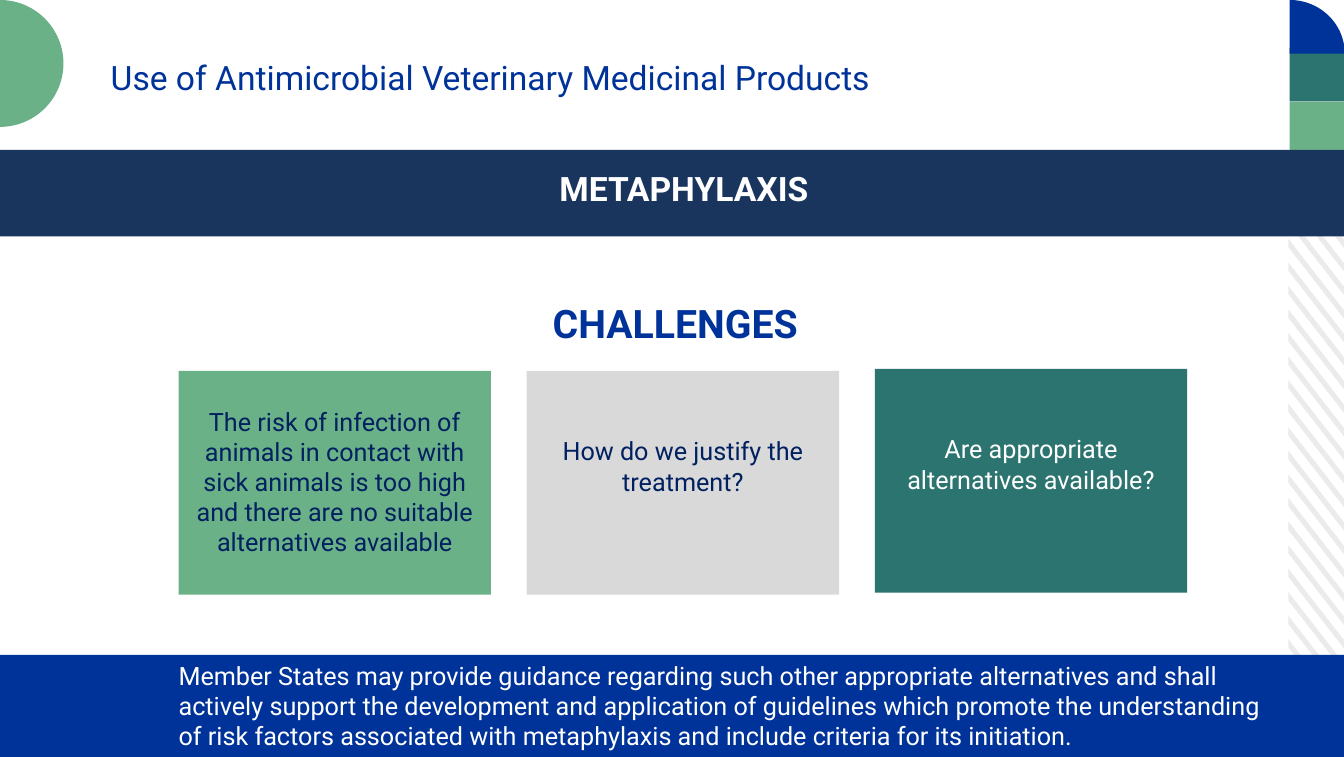
import math
from pptx import Presentation
from pptx.dml.color import RGBColor
from pptx.enum import shapes, text
from pptx.util import Cm, Pt

TITLE = "Use of Antimicrobial Veterinary Medicinal Products"
TOPIC = "METAPHYLAXIS"
HEAD = "CHALLENGES"
CARDS = [
    {"words": "The risk of infection of animals in contact with sick animals "
              "is too high and there are no suitable alternatives available",
     "fill": "green", "ink": "navy", "top": 9.35, "skip": 1},
    {"words": "How do we justify the treatment?",
     "fill": "grey", "ink": "navy", "top": 9.35, "skip": 2},
    {"words": "Are appropriate alternatives available?",
     "fill": "teal", "ink": "white", "top": 9.3, "skip": 2},
]
NOTE = [
    "Member States may provide guidance regarding such other appropriate alternatives and shall",
    "actively support the development and application of guidelines which promote the understanding",
    "of risk factors associated with metaphylaxis and include criteria for its initiation.",
]
THEME = {
    "font": "Roboto",
    "size": {"title": 24, "topic": 24, "head": 28, "body": 18},
    "color": {"blue": "003399", "navy": "002060", "band": "19355D", "green": "6BB188",
              "teal": "2C7470", "grey": "D9D9D9", "stripe": "ECEBEB", "white": "FFFFFF"},
}
WIDE, HIGH = 33.86, 19.08
EDGE, CREST, PAD, LINE = 32.46, 3.91, 0.13, 0.75
LEFT, CENTER = text.PP_ALIGN.LEFT, text.PP_ALIGN.CENTER
KIND = shapes.MSO_SHAPE


def tint(name):
    return RGBColor.from_string(THEME["color"][name])


def apply(item, vals):
    for key, val in vals.items():
        setattr(item, key, val)


def paint(shape, name):
    shape.shadow.inherit = False
    shape.fill.solid()
    shape.fill.fore_color.rgb = tint(name)
    shape.line.fill.background()
    return shape


def block(slide, box, name, kind=KIND.RECTANGLE):
    return paint(slide.shapes.add_shape(kind, *map(Cm, box)), name)


def outline(slide, loops, name):
    build = None
    for loop in loops:
        pts = [(Cm(x), Cm(y)) for x, y in loop]
        if build is None:
            build = slide.shapes.build_freeform(*pts[0], scale=1.0)
        else:
            build.move_to(*pts[0])
        build.add_line_segments(pts[1:], close=True)
    return paint(build.convert_to_shape(), name)


def write(shape, lines, size, ink, align=CENTER, bold=False, top=PAD, left=0.25):
    frame = shape.text_frame
    apply(frame, {"word_wrap": True, "auto_size": text.MSO_AUTO_SIZE.NONE,
                  "vertical_anchor": text.MSO_ANCHOR.TOP, "margin_top": Cm(top),
                  "margin_bottom": Cm(PAD), "margin_left": Cm(left),
                  "margin_right": Cm(0.25)})
    frame.text = "\n".join(lines)
    for para in frame.paragraphs:
        apply(para, {"alignment": align, "line_spacing": 1.0, "space_before": Pt(0)})
        for run in para.runs:
            apply(run.font, {"name": THEME["font"], "size": Pt(THEME["size"][size]),
                             "bold": bold})
            run.font.color.rgb = tint(ink)


def label(slide, box, words, size, ink):
    write(slide.shapes.add_textbox(*map(Cm, box)), [words], size, ink, bold=True)


def stripes(first=4.24, last=18.49, count=24, rise=1.8, thick=0.21):
    width = WIDE - EDGE
    step = (last - first) / count

    def side(y):
        ends = max(y, CREST), min(y + rise, HIGH)
        return [(EDGE + (end - y) / rise * width, end) for end in ends]

    for num in range(-3, count + 1):
        y = first + num * step
        yield side(y) + side(y + thick)[::-1]


def arc(x, y, wide, high, start, stop, count=48):
    for num in range(count + 1):
        turn = math.radians(start + (stop - start) * num / count)
        yield x + wide * math.cos(turn), y + high * math.sin(turn)


def main():
    deck = Presentation()
    apply(deck, {"slide_width": Cm(WIDE), "slide_height": Cm(HIGH)})
    slide = deck.slides.add_slide(deck.slide_layouts[5])

    title = slide.shapes.title
    apply(title, dict(zip(("left", "top", "width", "height"),
                          map(Cm, (2.54, 1.3, 22.25, 1.47)))))
    write(title, [TITLE], "title", "blue", LEFT)

    outline(slide, stripes(), "stripe")
    tile = 1.35
    for num, name in enumerate(("green", "teal")):
        block(slide, (32.49, CREST - (num + 1) * tile, 1.39, tile), name)
    quarter = [(32.49, tile), *arc(32.49, tile, 1.39, tile, -90, 0)]
    outline(slide, [quarter], "blue")
    outline(slide, [list(arc(0, 1.6, 1.6, 1.6, -90, 90))], "green")

    band = block(slide, (0, 3.78, WIDE, 2.18), "band", KIND.ROUNDED_RECTANGLE)
    band.adjustments[0] = 0
    label(slide, (1.34, 4.11, 31.78, 1.27), TOPIC, "topic", "white")
    label(slide, (8.54, 7.42, 16.94, 1.45), HEAD, "head", "blue")

    for num, card in enumerate(CARDS):
        box = (4.5 + num * 8.77, card["top"], 7.87, 5.64)
        write(block(slide, box, card["fill"]), [card["words"]], "body", card["ink"],
              top=PAD + card["skip"] * LINE)

    foot = block(slide, (0, 16.51, WIDE, HIGH - 16.51), "blue")
    write(foot, NOTE, "body", "white", LEFT, left=4.5)
    deck.save("out.pptx")


if __name__ == "__main__":
    main()
